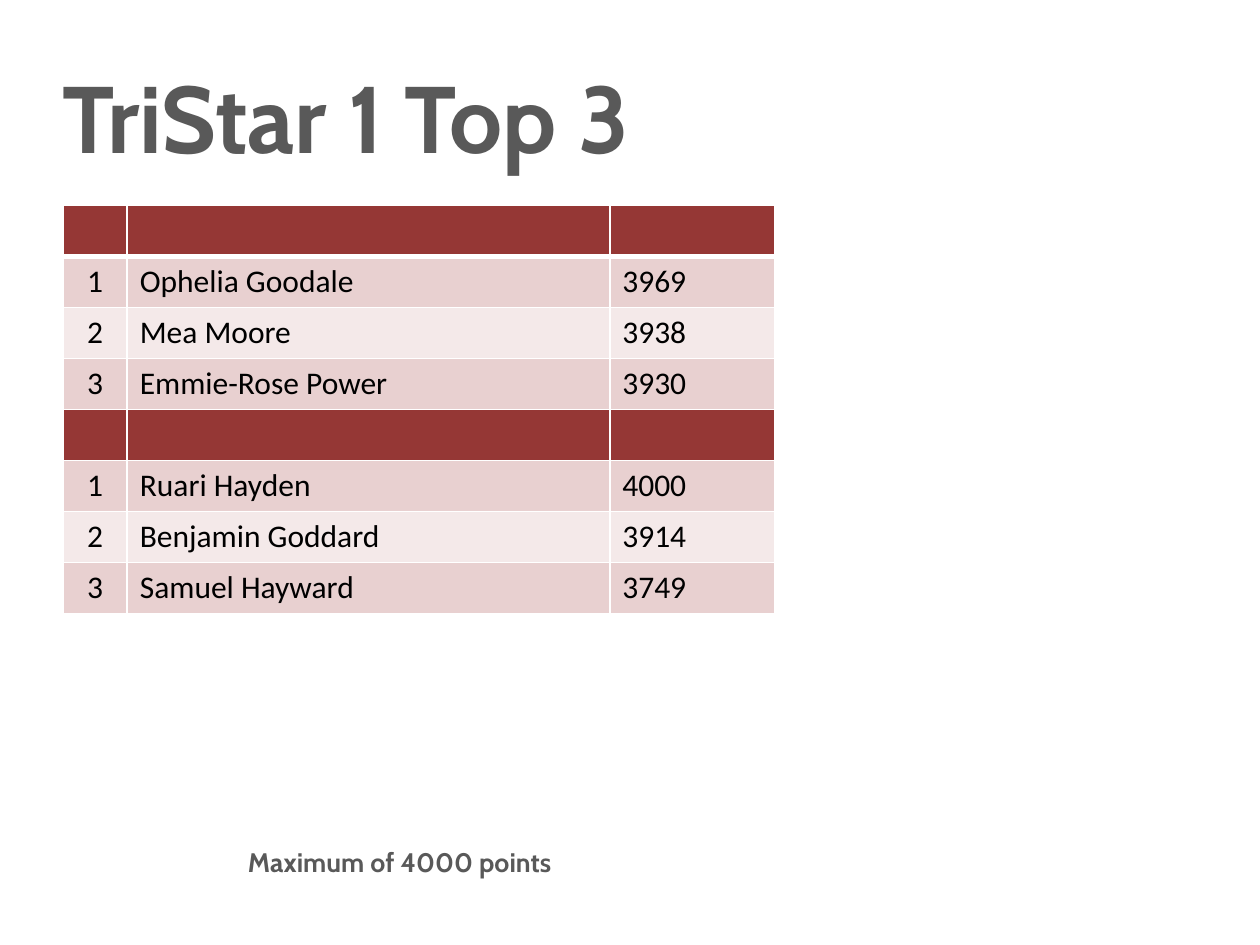
from lxml import etree
from pptx import Presentation
from pptx.dml.color import RGBColor
from pptx.enum.text import MSO_ANCHOR, PP_ALIGN
from pptx.oxml.ns import qn
from pptx.util import Inches, Pt

CENTER, LEFT = PP_ALIGN.CENTER, PP_ALIGN.LEFT
MIDDLE, TOP = MSO_ANCHOR.MIDDLE, MSO_ANCHOR.TOP
GREY = RGBColor(0x59, 0x59, 0x59)
BLACK = RGBColor(0x00, 0x00, 0x00)
WHITE = RGBColor(0xFF, 0xFF, 0xFF)
RED = RGBColor(0x95, 0x37, 0x35)
ROSE = RGBColor(0xE8, 0xD0, 0xD0)
PALE = RGBColor(0xF4, 0xE9, 0xE9)


def write(tf, text, font="Cabin", size=18, color=GREY, bold=False, align=LEFT, spacing=None):
    p = tf.paragraphs[0]
    p.alignment = align
    p.line_spacing = spacing
    p.font.size = Pt(size)
    if text:
        r = p.add_run()
        r.text = text
        r.font.name = font
        r.font.size = Pt(size)
        r.font.bold = bold
        r.font.color.rgb = color


def add_border(cell, side, width):
    ln = etree.SubElement(cell._tc.get_or_add_tcPr(), qn(f"a:ln{side}"), w=str(Pt(width)))
    fill = etree.SubElement(ln, qn("a:solidFill"))
    etree.SubElement(fill, qn("a:srgbClr"), val=str(WHITE))


prs = Presentation()
prs.slide_width, prs.slide_height = Inches(10), Inches(7.5)
s = prs.slides.add_slide(prs.slide_layouts[6])

texts = [
    ("TriStar 1 Top 3", (0.5, 0.38, 9, 1.25), 54, MIDDLE, 0, 0.8),
    ("Maximum of 4000 points", (1.87, 6.66, 2.8, 0.39), 15.3, TOP, 0.1, None),
]
for text, box, size, anchor, inset, spacing in texts:
    tf = s.shapes.add_textbox(*map(Inches, box)).text_frame
    tf.word_wrap = True
    tf.vertical_anchor = anchor
    tf.margin_left = Inches(inset)
    write(tf, text, size=size, bold=True, spacing=spacing)

groups = [
    [("Ophelia Goodale", "3969"), ("Mea Moore", "3938"), ("Emmie-Rose Power", "3930")],
    [("Ruari Hayden", "4000"), ("Benjamin Goddard", "3914"), ("Samuel Hayward", "3749")],
]
rows = []
for group in groups:
    rows.append((RED, ("", "", "")))
    for rank, (name, points) in enumerate(group, 1):
        rows.append((ROSE if rank % 2 else PALE, (str(rank), name, points)))

col_widths = [0.51, 3.83, 1.31]
table_height = 3.24
frame = s.shapes.add_table(len(rows), len(col_widths), Inches(0.5), Inches(1.63),
                           Inches(sum(col_widths)), Inches(table_height))
table = frame.table
for column, width in zip(table.columns, col_widths):
    column.width = Inches(width)
for i, (fill, values) in enumerate(rows):
    table.rows[i].height = Inches(table_height / len(rows))
    for j, value in enumerate(values):
        cell = table.cell(i, j)
        widths = {"L": 1, "R": 1, "T": 3 if i == 1 else 1, "B": 3 if i == 0 else 1}
        for side, width in widths.items():
            add_border(cell, side, width)
        cell.fill.solid()
        cell.fill.fore_color.rgb = fill
        write(cell.text_frame, value, font="Calibri", color=BLACK, align=LEFT if j else CENTER)

prs.save("out.pptx")
